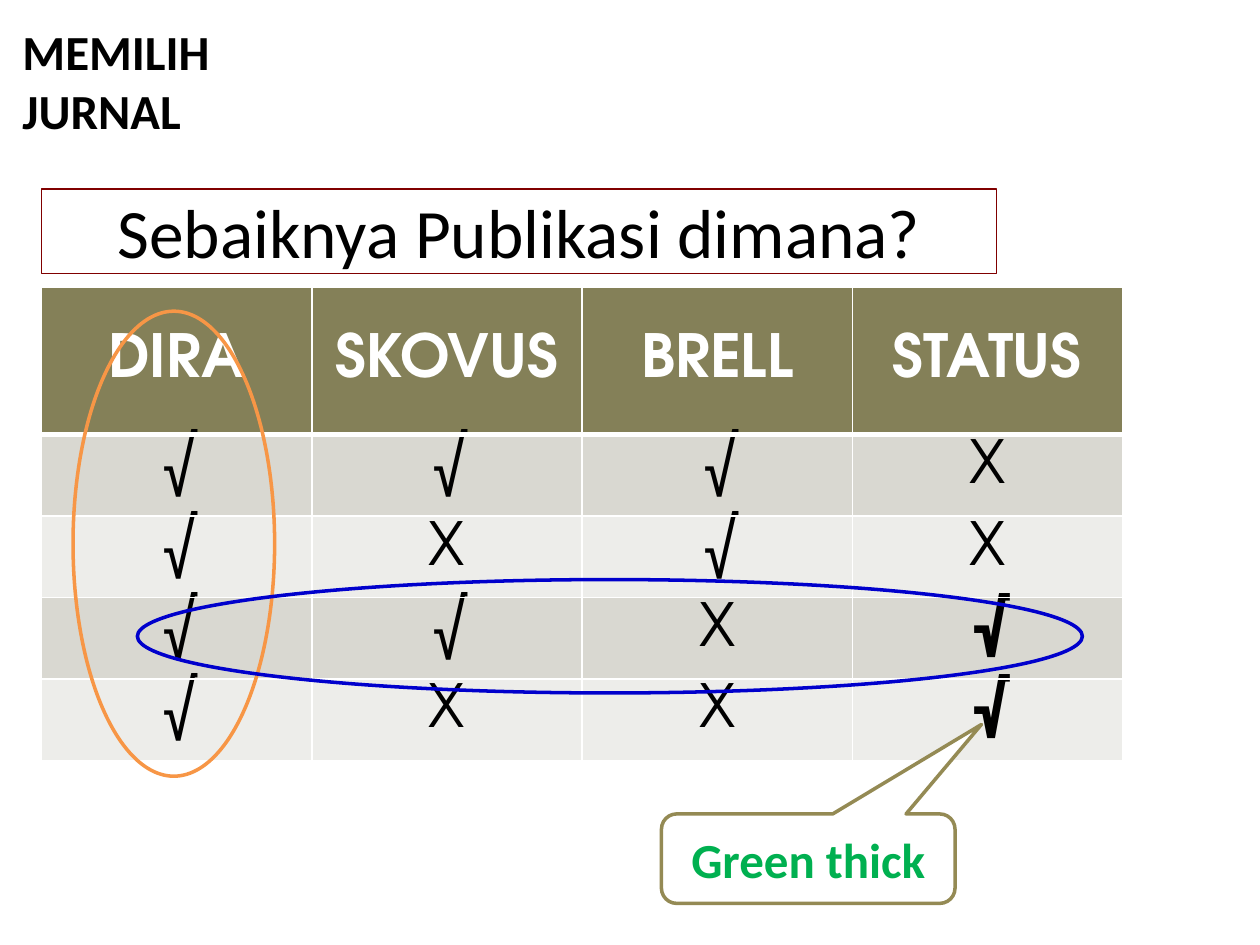
"""Build a slide with a table for choosing a journal to publish in."""
from lxml import etree
from pptx import Presentation
from pptx import util as u
from pptx.dml.color import RGBColor
from pptx.enum import shapes, text
from pptx.oxml.ns import qn


def color(value):
    return RGBColor.from_string(value)


def style(p, size, value, bold=False, name="Calibri", align=text.PP_ALIGN.CENTER):
    p.alignment = align
    p.font.size = u.Pt(size)
    p.font.name = name
    p.font.bold = bold
    p.font.color.rgb = color(value)


prs = Presentation()
prs.slide_width, prs.slide_height = u.Inches(10), u.Inches(7.5)
s = prs.slides.add_slide(prs.slide_layouts[5])

title = s.shapes.title
title.left, title.top = u.Inches(0.33), u.Inches(1.5)
title.width, title.height = u.Inches(7.58), u.Inches(0.67)
title.line.color.rgb = color("800000")
title.line.width = u.Pt(0.75)
tf = title.text_frame
tf.text = "Sebaiknya Publikasi dimana?"
tf.auto_size = text.MSO_AUTO_SIZE.NONE
tf.vertical_anchor = text.MSO_ANCHOR.MIDDLE
style(tf.paragraphs[0], 39.6, "000000")

box = s.shapes.add_textbox(u.Inches(0.08), u.Inches(0.12), u.Inches(2.42), u.Inches(1.04))
tf = box.text_frame
tf.word_wrap = True
tf.text = "MEMILIH JURNAL"
style(tf.paragraphs[0], 28, "000000", bold=True, align=text.PP_ALIGN.LEFT)

rows = [
    ("DIRA", "SKOVUS", "BRELL", "STATUS"),
    ("√", "√", "√", "X"),
    ("√", "X", "√", "X"),
    ("√", "√", "X", "√"),
    ("√", "X", "X", "√"),
]
table = s.shapes.add_table(5, 4, u.Inches(0.33), u.Inches(2.28), u.Inches(8.58), u.Inches(3.75)).table
for column in table.columns:
    column.width = u.Inches(2.145)
for i, row in enumerate(rows):
    header = i == 0
    table.rows[i].height = u.Inches(1.17 if header else 0.64)
    for j, value in enumerate(row):
        cell = table.cell(i, j)
        cell.text = value
        cell.margin_left = cell.margin_right = u.Inches(0.08)
        cell.margin_top = cell.margin_bottom = u.Inches(0.04)
        cell.vertical_anchor = text.MSO_ANCHOR.MIDDLE if header else text.MSO_ANCHOR.TOP
        accepted = j == 3 and value == "√"
        style(cell.text_frame.paragraphs[0], 34, "FFFFFF" if header else "000000",
              bold=header or accepted, name="TeX Gyre Adventor")
        tc_pr = cell._tc.get_or_add_tcPr()
        for side in "LRTB":
            thick = (i, side) in ((0, "B"), (1, "T"))
            ln = etree.SubElement(tc_pr, qn(f"a:ln{side}"), w=str(u.Pt(3 if thick else 1)))
            fill = etree.SubElement(ln, qn("a:solidFill"))
            etree.SubElement(fill, qn("a:srgbClr"), val="FFFFFF")
        cell.fill.solid()
        cell.fill.fore_color.rgb = color("848058" if header else ("EDEDEA", "D9D8D1")[i % 2])

for x, y, w, h, angle, line in (
    (0.58, 2.47, 1.6, 3.69, 0, "F79646"),
    (4.39, 1.3, 0.9, 7.5, 90, "0000CC"),
):
    sp = s.shapes.add_shape(shapes.MSO_SHAPE.OVAL, u.Inches(x), u.Inches(y), u.Inches(w), u.Inches(h))
    sp.rotation = angle
    sp.shadow.inherit = False
    sp.fill.background()
    sp.line.color.rgb = color(line)
    sp.line.width = u.Pt(2)

callout = s.shapes.add_shape(shapes.MSO_SHAPE.ROUNDED_RECTANGULAR_CALLOUT,
                             u.Inches(5.25), u.Inches(6.46), u.Inches(2.33), u.Inches(0.71))
for k, value in enumerate((0.59, -1.5, 0.17)):
    callout.adjustments[k] = value
callout.shadow.inherit = False
callout.fill.solid()
callout.fill.fore_color.rgb = color("FFFFFF")
callout.line.color.rgb = color("948A54")
callout.line.width = u.Pt(2)
tf = callout.text_frame
tf.text = "Green thick"
tf.vertical_anchor = text.MSO_ANCHOR.MIDDLE
style(tf.paragraphs[0], 28, "00B050", bold=True)

prs.save("out.pptx")
